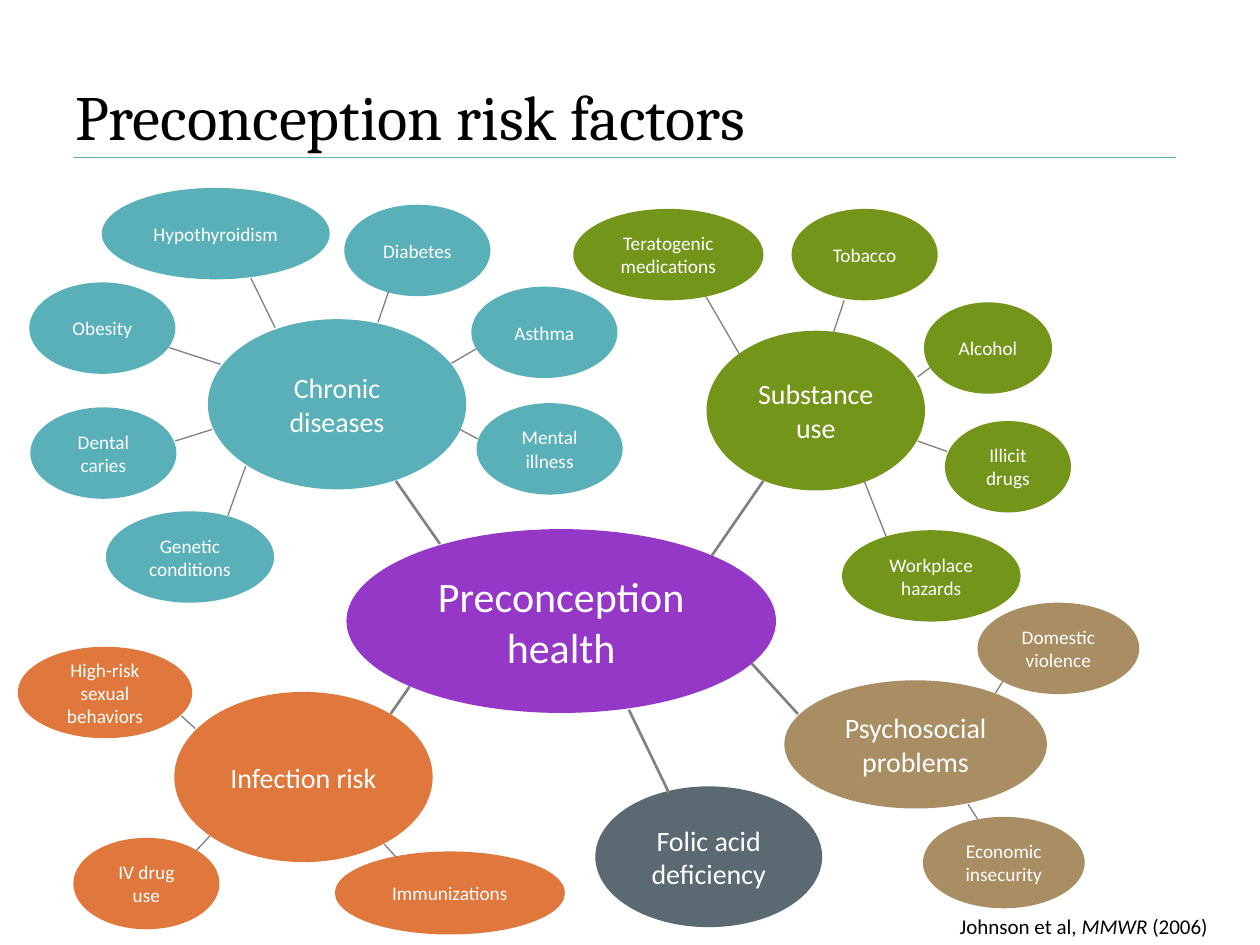
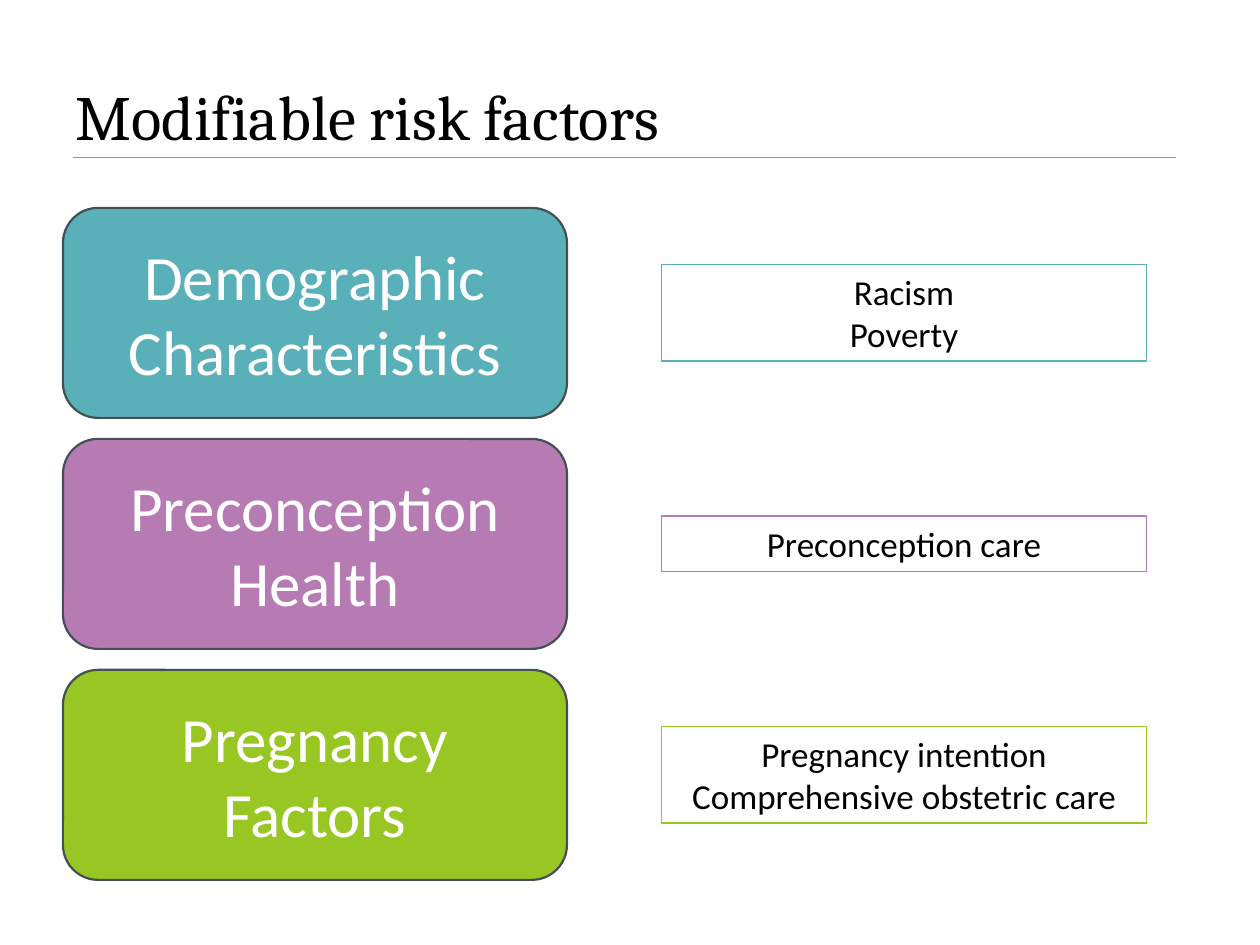
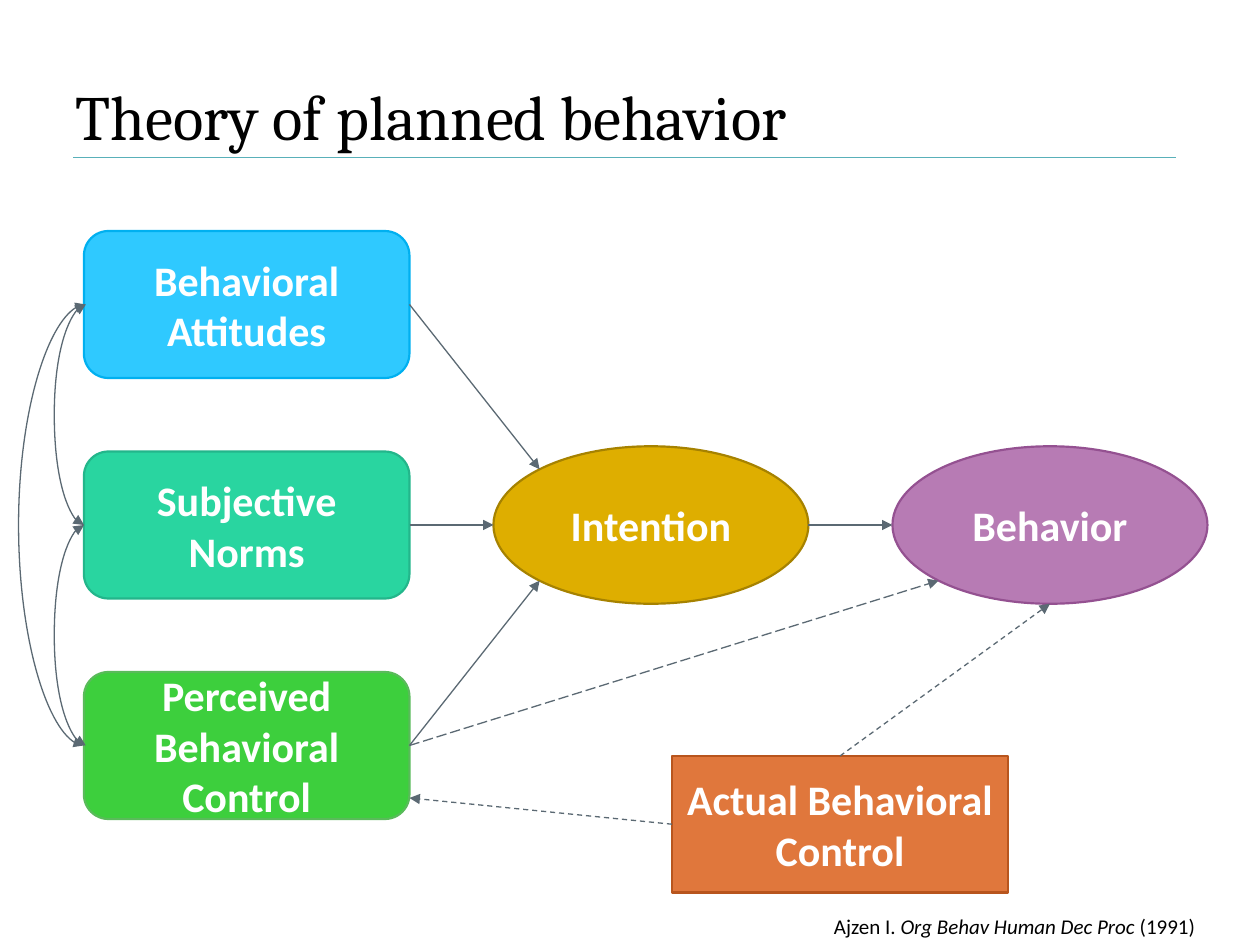
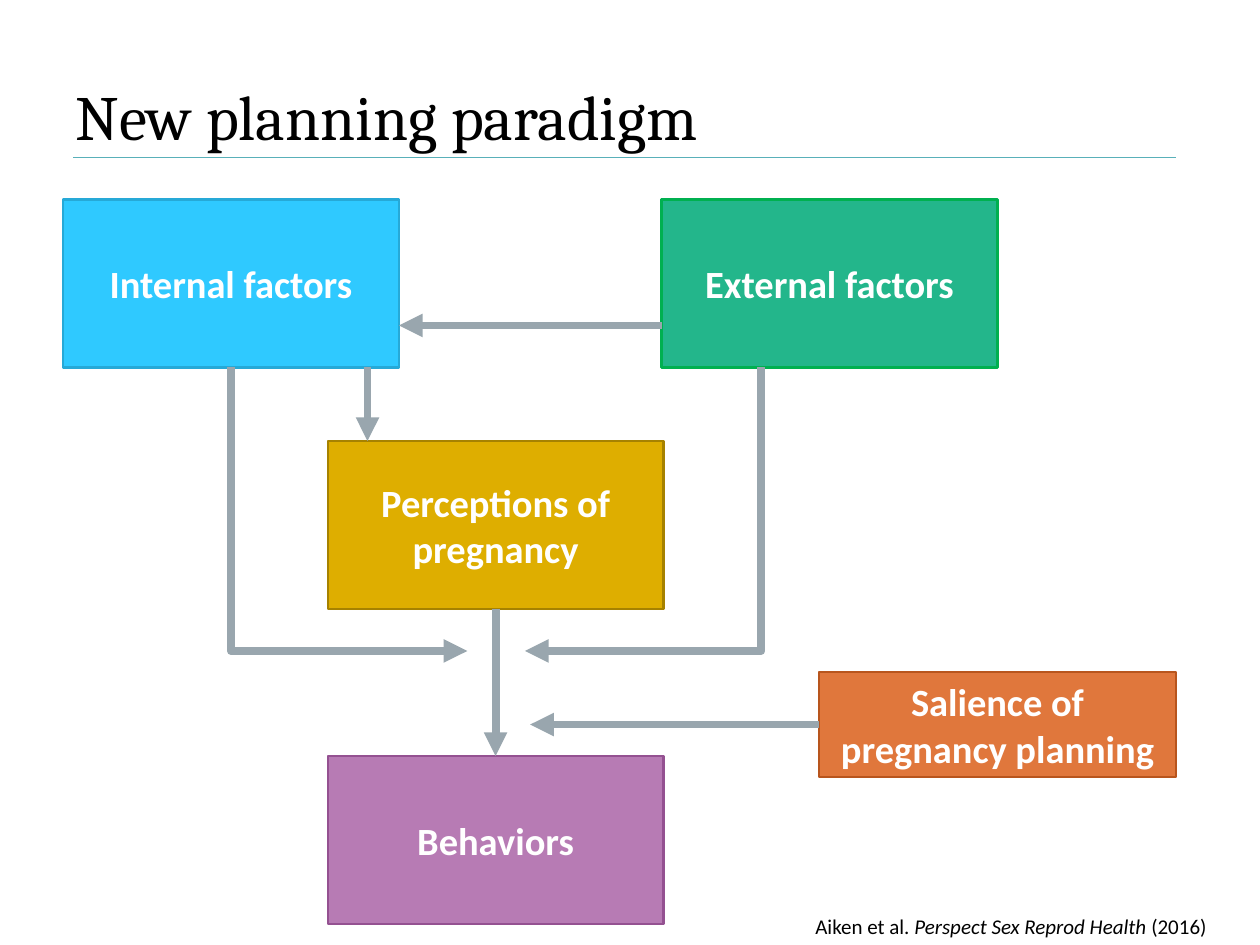
from dataclasses import dataclass
from typing import NamedTuple, Optional

from lxml import etree
from pptx import Presentation
from pptx.dml.color import RGBColor
from pptx.enum.dml import MSO_LINE
from pptx.enum.shapes import MSO_CONNECTOR, MSO_SHAPE
from pptx.enum.text import MSO_ANCHOR, MSO_AUTO_SIZE, PP_ALIGN
from pptx.oxml.ns import qn
from pptx.shapes.autoshape import Shape
from pptx.shapes.connector import Connector
from pptx.slide import Slide
from pptx.util import Emu, Inches, Pt

ELLIPSE, RECT, ROUNDED = MSO_SHAPE.OVAL, MSO_SHAPE.RECTANGLE, MSO_SHAPE.ROUNDED_RECTANGLE
STRAIGHT, ELBOW, CURVE = MSO_CONNECTOR.STRAIGHT, MSO_CONNECTOR.ELBOW, MSO_CONNECTOR.CURVE
DASH, LONG_DASH = MSO_LINE.DASH, MSO_LINE.LONG_DASH
LEFT, CENTER, RIGHT = PP_ALIGN.LEFT, PP_ALIGN.CENTER, PP_ALIGN.RIGHT
TOP_SITE, LEFT_SITE, BOTTOM_SITE, RIGHT_SITE = range(4)

WIDTH, HEIGHT = Inches(10), Inches(7.5)
COLUMNS = 120
CELL = WIDTH / COLUMNS
DIAGONAL = 0.5 ** 0.5
TITLE_FONT, BODY_FONT = "Cambria", "Calibri"

COLORS = {
    "black": "000000", "white": "FFFFFF", "teal": "59B0B9", "violet": "9538C8",
    "olive": "72951A", "tan": "A98D63", "orange": "E0773C", "rust": "B8551D",
    "slate": "5B6973", "dark slate": "444F56", "gray": "808080", "silver": "99A6AE",
    "mauve": "B77BB4", "plum": "945191", "lime": "98C723", "sky": "2FC9FF",
    "azure": "00B0F0", "blue": "26A9D7", "mint": "29D5A0", "jade": "23B68B",
    "green": "3DCF3D", "leaf": "59BB5A", "emerald": "00B050",
    "gold": "DEAE00", "bronze": "A68200",
}


class Area(NamedTuple):
    left: float
    top: float
    width: float
    height: float


class Span(NamedTuple):
    x1: float
    y1: float
    x2: float
    y2: float


class Joint(NamedTuple):
    box: Shape
    site: int


@dataclass(frozen=True)
class Lettering:
    size: float
    color: str = "white"
    bold: bool = False
    font: str = BODY_FONT
    align: PP_ALIGN = CENTER


@dataclass(frozen=True)
class Stroke:
    color: str
    weight: float
    arrows: tuple[str, ...] = ()
    dash: Optional[MSO_LINE] = None


@dataclass(frozen=True)
class Node:
    text: str
    area: Area
    fill: Optional[str]
    edge: str
    kind: MSO_SHAPE = RECT


@dataclass(frozen=True)
class Bubble:
    text: str
    area: Area
    spoke: Span


@dataclass(frozen=True)
class Cluster:
    hub: Bubble
    color: str
    members: tuple[Bubble, ...] = ()


@dataclass(frozen=True)
class Citation:
    author: str
    journal: str
    year: str
    left: float
    width: float


TITLE = Lettering(36, "black", font=TITLE_FONT, align=LEFT)
RULE = Stroke("teal", 0.75)
SPOKE = Stroke("gray", 0.75)
HUB_SPOKE = Stroke("gray", 1.5)
FLOW = Stroke("slate", 0.75, ("tailEnd",))
MUTUAL = Stroke("slate", 0.75, ("headEnd", "tailEnd"))
HEAVY = Stroke("silver", 4.5, ("tailEnd",))


def cells(count: float) -> Emu:
    return Emu(round(count * CELL))


def rgb(name: str) -> RGBColor:
    return RGBColor.from_string(COLORS[name])


def letter(box: Shape, text: str, style: Lettering) -> None:
    frame = box.text_frame
    frame.text = text
    frame.word_wrap = True
    frame.vertical_anchor = MSO_ANCHOR.MIDDLE
    for para in frame.paragraphs:
        para.alignment = style.align
        for run in para.runs:
            run.font.name = style.font
            run.font.size = Pt(style.size)
            run.font.bold = style.bold
            run.font.color.rgb = rgb(style.color)


def draw_node(page: Slide, node: Node, style: Lettering, weight: float = 1.25) -> Shape:
    box = page.shapes.add_shape(node.kind, *map(cells, node.area))
    box.shadow.inherit = False
    if node.fill:
        box.fill.solid()
        box.fill.fore_color.rgb = rgb(node.fill)
    else:
        box.fill.background()
    box.line.color.rgb = rgb(node.edge)
    box.line.width = Pt(weight)
    letter(box, node.text, style)
    return box


def apply_stroke(line: Connector, stroke: Stroke) -> None:
    line.line.color.rgb = rgb(stroke.color)
    line.line.width = Pt(stroke.weight)
    if stroke.dash:
        line.line.dash_style = stroke.dash
    properties = line.element.spPr
    for arrow in stroke.arrows:
        etree.SubElement(properties.find(qn("a:ln")), qn(f"a:{arrow}"), type="triangle")
    etree.SubElement(properties, qn("a:effectLst"))


def draw_line(page: Slide, span: Span, stroke: Stroke,
              begin: Optional[Joint] = None, end: Optional[Joint] = None) -> None:
    line = page.shapes.add_connector(STRAIGHT, *map(cells, span))
    if begin:
        line.begin_connect(*begin)
    if end:
        line.end_connect(*end)
    apply_stroke(line, stroke)


def draw_turned(page: Slide, kind: MSO_CONNECTOR, area: Area, turn: int, flip: str,
                reach: float, stroke: Stroke, begin: Optional[Joint] = None,
                end: Optional[Joint] = None) -> None:
    line = page.shapes.add_connector(kind, 0, 0, 0, 0)
    if begin and end:
        line.begin_connect(*begin)
        line.end_connect(*end)
    line.left, line.top, line.width, line.height = map(cells, area)
    properties = line.element.spPr
    transform = properties.find(qn("a:xfrm"))
    transform.set("rot", str(turn * 60000))
    for axis in "HV":
        transform.set(f"flip{axis}", str(int(axis == flip)))
    guides = properties.find(qn("a:prstGeom")).find(qn("a:avLst"))
    etree.SubElement(guides, qn("a:gd"), name="adj1",
                     fmla=f"val {round(reach / area.width * 100000)}")
    apply_stroke(line, stroke)


def add_page(deck: Presentation, title: str) -> Slide:
    page = deck.slides.add_slide(deck.slide_layouts[6])
    draw_line(page, Span(7, 15, 112, 15), RULE)
    letter(page.shapes.add_textbox(*map(cells, Area(6, 6, 106, 10))), title, TITLE)
    return page


def cite(page: Slide, source: Citation) -> None:
    area = Area(source.left, 86.4, source.width, 3.6)
    frame = page.shapes.add_textbox(*map(cells, area)).text_frame
    frame.word_wrap = False
    frame.auto_size = MSO_AUTO_SIZE.SHAPE_TO_FIT_TEXT
    frame.vertical_anchor = MSO_ANCHOR.BOTTOM
    para = frame.paragraphs[0]
    para.alignment = RIGHT
    for text in (source.author, source.journal, source.year):
        run = para.add_run()
        run.text = text
        run.font.name = BODY_FONT
        run.font.size = Pt(12)
        run.font.italic = text == source.journal
        run.font.color.rgb = rgb("black")


def leaf(text: str, left: float, top: float, spoke: Span,
         width: float = 13.7, height: float = 8.5) -> Bubble:
    return Bubble(text, Area(left, top, width, height), spoke)


CLUSTERS = (
    Cluster(
        Bubble("Chronic diseases", Area(19.9, 30.5, 24.4, 16), Span(41.9, 51.8, 37.7, 45.8)),
        "teal",
        (
            leaf("Diabetes", 32.9, 19.6, Span(37, 27.8, 36, 30.7)),
            leaf("Asthma", 45, 27.4, Span(45.4, 33.2, 43, 34.6)),
            leaf("Dental caries", 3, 38.9, Span(16.7, 42, 20.2, 40.9)),
            leaf("Obesity", 2.9, 27, Span(16.1, 33.1, 21, 34.7)),
            leaf("Genetic conditions", 10.2, 48.8, Span(21.7, 49.1, 23.4, 44.4), 15.8),
            leaf("Hypothyroidism", 9.8, 18, Span(23.9, 26.5, 26.2, 31.2), 21.5),
            leaf("Mental illness", 45.5, 38.5, Span(45.5, 41.8, 43.8, 40.9)),
        ),
    ),
    Cluster(
        Bubble("Substance use", Area(67.4, 31.6, 20.6, 15), Span(67.8, 52.9, 72.7, 45.8)),
        "olive",
        (
            leaf("Alcohol", 88.1, 28.9, Span(87.4, 35.9, 88.6, 35), 12),
            leaf("Tobacco", 75.5, 20, Span(79.4, 31.6, 80.4, 28.6)),
            leaf("Illicit drugs", 90.1, 40.2, Span(87.4, 42, 90.2, 43), 11.8),
            leaf("Teratogenic medications", 54.7, 20, Span(70.4, 33.7, 67.2, 28.2), 17.9),
            leaf("Workplace hazards", 80.3, 50.6, Span(82.3, 45.8, 84.4, 51.1), 16.8),
        ),
    ),
    Cluster(
        Bubble("Psychosocial problems", Area(74.8, 64.9, 24.8, 12), Span(71.6, 63.2, 76, 68)),
        "tan",
        (
            leaf("Domestic violence", 93.2, 57.5, Span(95.5, 64.9, 94.8, 66), 15.2),
            leaf("Economic insecurity", 88, 77.9, Span(92.2, 76.6, 93.1, 78), 15.2),
        ),
    ),
    Cluster(
        Bubble("Infection risk", Area(16.7, 66, 24.4, 16), Span(37.2, 68, 39, 65.4)),
        "orange",
        (
            leaf("High-risk sexual behaviors", 1.8, 61.7, Span(17.3, 68.2, 18.6, 69.4), 16.4),
            leaf("IV drug use", 7.1, 79.9, Span(18.7, 81, 20, 79.6)),
            leaf("Immunizations", 32, 81.2, Span(37.7, 81.6, 36.6, 80.4), 21.7, 7.7),
        ),
    ),
    Cluster(
        Bubble("Folic acid deficiency", Area(56.8, 75, 21.4, 13.2), Span(59.9, 67.6, 63.7, 75.5)),
        "slate",
    ),
)


def draw_bubble(page: Slide, bubble: Bubble, color: str, size: float, spoke: Stroke) -> None:
    draw_node(page, Node(bubble.text, bubble.area, color, color, ELLIPSE), Lettering(size))
    draw_line(page, bubble.spoke, spoke)


def build_risk_map(deck: Presentation) -> None:
    page = add_page(deck, "Preconception risk factors")
    core = Node("Preconception health", Area(33.1, 50.5, 40.7, 17.3), "violet", "violet", ELLIPSE)
    draw_node(page, core, Lettering(24))
    for cluster in CLUSTERS:
        draw_bubble(page, cluster.hub, cluster.color, 16, HUB_SPOKE)
        for member in cluster.members:
            draw_bubble(page, member, cluster.color, 11, SPOKE)
    cite(page, Citation("Johnson et al, ", "MMWR", " (2006)", 89.9, 26.3))


def build_modifiable(deck: Presentation) -> None:
    page = add_page(deck, "Modifiable risk factors")
    rows = (
        ("Demographic Characteristics", "teal", "Racism\nPoverty"),
        ("Preconception Health", "mauve", "Preconception care"),
        ("Pregnancy Factors", "lime", "Pregnancy intention\nComprehensive obstetric care"),
    )
    for index, (heading, color, examples) in enumerate(rows):
        top = 19.8 + 22 * index
        card = Node(heading, Area(6, top, 48, 20), color, "dark slate", ROUNDED)
        draw_node(page, card, Lettering(36))
        height = 9.2 if "\n" in examples else 5.3
        area = Area(63, top + (20 - height) / 2, 46.2, height)
        note = draw_node(page, Node(examples, area, None, color), Lettering(20, "black"), 0.75)
        note.text_frame.vertical_anchor = MSO_ANCHOR.TOP
        note.text_frame.auto_size = MSO_AUTO_SIZE.SHAPE_TO_FIT_TEXT


def build_behavior_theory(deck: Presentation) -> None:
    page = add_page(deck, "Theory of planned behavior")
    style = Lettering(24, bold=True)
    beliefs = (
        ("Behavioral Attitudes", "sky", "azure"),
        ("Subjective Norms", "mint", "jade"),
        ("Perceived Behavioral Control", "green", "leaf"),
    )
    attitudes, norms, control = (
        draw_node(page, Node(text, Area(8, 22 + 21 * index, 31, 14), fill, edge, ROUNDED), style)
        for index, (text, fill, edge) in enumerate(beliefs)
    )
    for text, left, fill, edge in (("Intention", 47, "gold", "bronze"),
                                   ("Behavior", 85, "mauve", "plum")):
        draw_node(page, Node(text, Area(left, 42.5, 30, 15), fill, edge, ELLIPSE), style)
    actual_node = Node("Actual Behavioral Control", Area(64, 72, 32, 13), "orange", "rust")
    actual = draw_node(page, actual_node, style)

    inset, rise = 15 * DIAGONAL, 7.5 * DIAGONAL
    long_dash = Stroke("slate", 0.75, ("tailEnd",), LONG_DASH)
    short_dash = Stroke("slate", 0.75, ("tailEnd",), DASH)
    arrows = (
        (Span(39, 29, 62 - inset, 50 - rise), FLOW, Joint(attitudes, RIGHT_SITE)),
        (Span(39, 50, 47, 50), FLOW, Joint(norms, RIGHT_SITE)),
        (Span(39, 71, 62 - inset, 50 + rise), FLOW, Joint(control, RIGHT_SITE)),
        (Span(77, 50, 85, 50), FLOW, None),
        (Span(39, 71, 100 - inset, 50 + rise), long_dash, Joint(control, RIGHT_SITE)),
        (Span(64, 78.5, 39, 76), short_dash, Joint(actual, LEFT_SITE)),
        (Span(80, 72, 100, 57.5), short_dash, Joint(actual, TOP_SITE)),
    )
    for span, stroke, begin in arrows:
        draw_line(page, span, stroke, begin)

    sliver = 0.17
    loops = (
        (attitudes, norms, 29, 21, "V", 3),
        (control, norms, 50, 21, "", 3),
        (attitudes, control, 29, 42, "V", 6.4),
    )
    for begin, end, top, height, flip, reach in loops:
        draw_turned(page, CURVE, Area(8, top, sliver, height), 180, flip, reach, MUTUAL,
                    Joint(begin, LEFT_SITE), Joint(end, LEFT_SITE))
    cite(page, Citation("Ajzen I. ", "Org Behav Human Dec Proc", " (1991)", 77.8, 37.2))


def build_paradigm(deck: Presentation) -> None:
    page = add_page(deck, "New planning paradigm")
    nodes = (
        Node("Internal factors", Area(6, 19, 32, 16), "sky", "blue"),
        Node("External factors", Area(63, 19, 32, 16), "jade", "emerald"),
        Node("Perceptions of pregnancy", Area(31.2, 42, 32, 16), "gold", "bronze"),
        Node("Behaviors", Area(31.2, 72, 32, 16), "mauve", "plum"),
        Node("Salience of pregnancy planning", Area(78, 64, 34, 10), "orange", "rust"),
    )
    boxes = [draw_node(page, node, Lettering(22, bold=True)) for node in nodes]
    perceptions, behaviors, salience = boxes[2:]
    draw_line(page, Span(63, 31, 38, 31), HEAVY)
    draw_line(page, Span(35, 35, 35, 42), HEAVY)
    draw_line(page, Span(47.2, 58, 47.2, 72), HEAVY,
              Joint(perceptions, BOTTOM_SITE), Joint(behaviors, TOP_SITE))
    draw_line(page, Span(78, 69, 50.5, 69), HEAVY, Joint(salience, LEFT_SITE))
    drop, run = 27, 22.5
    for left_end, turn, flip in ((22, 270, "H"), (50, 90, "")):
        area = Area(left_end + (run - drop) / 2, 35 + (drop - run) / 2, drop, run)
        draw_turned(page, ELBOW, area, turn, flip, drop, HEAVY)
    cite(page, Citation("Aiken et al. ", "Perspect Sex Reprod Health", " (2016)", 76, 40.1))


def main() -> None:
    deck = Presentation()
    deck.slide_width, deck.slide_height = WIDTH, HEIGHT
    for build in (build_risk_map, build_modifiable, build_behavior_theory, build_paradigm):
        build(deck)
    deck.save("out.pptx")


if __name__ == "__main__":
    main()
